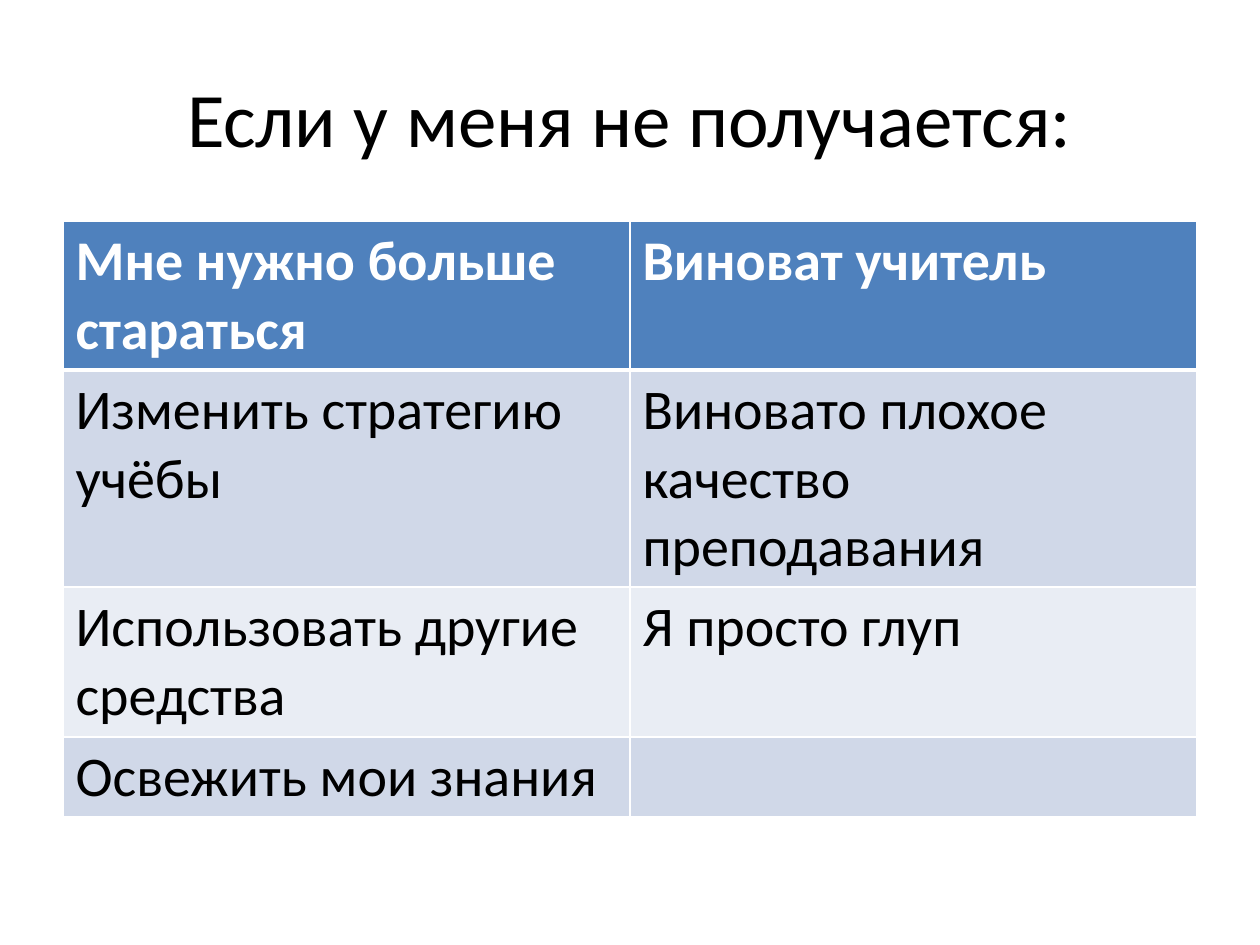
import dataclasses

import lxml.etree
import pptx
import pptx.dml.color
import pptx.enum.text
import pptx.oxml.ns
import pptx.util

EMU_PER_PX = 914400 / 126


@dataclasses.dataclass(frozen=True)
class Theme:
    font: str = "Calibri"
    title_size: int = 44
    table_size: int = 32
    text: str = "000000"
    header_text: str = "FFFFFF"
    header_fill: str = "4F81BD"
    band_fills: tuple = ("D0D8E8", "E9EDF4")
    border: str = "FFFFFF"
    thin_border: int = 1
    header_border: int = 3


THEME = Theme()

ROWS = [
    ("Мне нужно больше стараться", "Виноват учитель"),
    ("Изменить стратегию учёбы", "Виновато плохое качество преподавания"),
    ("Использовать другие средства", "Я просто глуп"),
    ("Освежить мои знания", ""),
]
ROW_HEIGHTS = (149, 217, 150, 80)


def px(length):
    return pptx.util.Emu(round(length * EMU_PER_PX))


def style_font(font, size, color, bold=False):
    font.name = THEME.font
    font.size = pptx.util.Pt(size)
    font.bold = bold
    font.color.rgb = pptx.dml.color.RGBColor.from_string(color)


def set_borders(cell, top, bottom):
    properties = cell._tc.get_or_add_tcPr()
    qualified = pptx.oxml.ns.qn
    widths = {"lnL": THEME.thin_border, "lnR": THEME.thin_border, "lnT": top, "lnB": bottom}
    for index, (side, width) in enumerate(widths.items()):
        line = lxml.etree.Element(qualified(f"a:{side}"), w=str(pptx.util.Pt(width)))
        fill = lxml.etree.SubElement(line, qualified("a:solidFill"))
        lxml.etree.SubElement(fill, qualified("a:srgbClr"), val=THEME.border)
        properties.insert(index, line)


def add_title(slide, text, left, top, width, height):
    shape = slide.shapes.add_textbox(px(left), px(top), px(width), px(height))
    frame = shape.text_frame
    frame.word_wrap = True
    frame.vertical_anchor = pptx.enum.text.MSO_ANCHOR.MIDDLE
    frame.text = text
    paragraph = frame.paragraphs[0]
    paragraph.alignment = pptx.enum.text.PP_ALIGN.CENTER
    style_font(paragraph.font, THEME.title_size, THEME.text)


def style_cell(cell, text, row_index):
    is_header = row_index == 0
    bands = THEME.band_fills
    fill = THEME.header_fill if is_header else bands[(row_index - 1) % len(bands)]
    cell.fill.solid()
    cell.fill.fore_color.rgb = pptx.dml.color.RGBColor.from_string(fill)
    set_borders(
        cell,
        top=THEME.header_border if row_index == 1 else THEME.thin_border,
        bottom=THEME.header_border if is_header else THEME.thin_border,
    )
    cell.text = text
    color = THEME.header_text if is_header else THEME.text
    style_font(cell.text_frame.paragraphs[0].font, THEME.table_size, color, is_header)


def add_comparison_table(slide, rows, row_heights, left, top, width):
    column_count = len(rows[0])
    frame = slide.shapes.add_table(
        len(rows), column_count, px(left), px(top), px(width), px(sum(row_heights))
    )
    table = frame.table
    for column in table.columns:
        column.width = px(width / column_count)
    for row_index, (texts, height) in enumerate(zip(rows, row_heights)):
        table.rows[row_index].height = px(height)
        for cell, text in zip(table.rows[row_index].cells, texts):
            style_cell(cell, text, row_index)


def main():
    presentation = pptx.Presentation()
    presentation.slide_width = px(1260)
    presentation.slide_height = px(945)
    slide = presentation.slides.add_slide(presentation.slide_layouts[6])
    add_title(slide, "Если у меня не получается:", 63, 38, 1134, 157)
    add_comparison_table(slide, ROWS, ROW_HEIGHTS, 63, 221, 1134)
    presentation.save("out.pptx")


if __name__ == "__main__":
    main()
